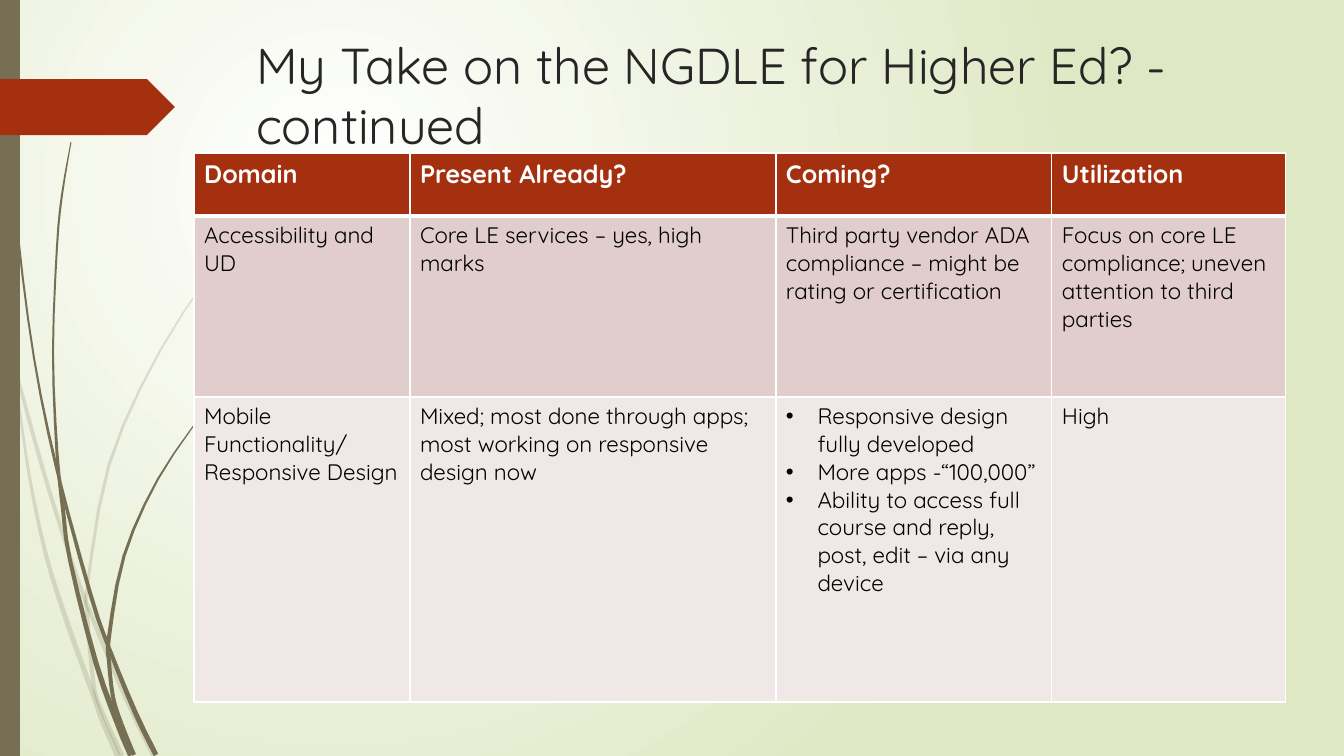
import math

import pptx
import pptx.dml.color
import pptx.enum.shapes
import pptx.enum.text
import pptx.oxml
import pptx.oxml.ns
import pptx.util

PX = 914400 / 100.8  # EMU in one px
FONT = "Quicksand"
COLORS = {
    "stem": "766F54", "accent": "A53010", "title": "262626", "black": "000000",
    "white": "FFFFFF", "band": "E1CDCC", "band_light": "F0E8E7", "edge": "DFE8C4",
}

# Each strand has the points where its pieces meet, then its spine
# from tip to root: (x, y, thickness) in px
PALE_STRANDS = [
    ((1, 4), [(0, 293, 3), (11, 350, 3), (36, 445, 4), (60, 525, 4), (86, 602, 4), (126, 698, 5),
              (154, 756, 5)]),
    ((6,), [(11, 353, 1), (17, 390, 2), (29, 474, 3), (46, 555, 4), (68, 625, 5), (93, 694, 5),
            (102, 720, 5), (118, 756, 6)]),
    ((5, 6, 8, 9), [(314, 155, 1), (271, 199, 1), (230, 246, 1), (160, 351, 2), (109, 465, 3),
                    (87, 589, 3), (87, 610, 4), (90, 651, 4), (95, 692, 4), (104, 716, 4),
                    (122, 756, 5)]),
]
DARK_STRANDS = [
    ((4, 6), [(4, 0, 1), (8, 111, 1), (18, 235, 2), (34, 358, 2), (57, 470, 3), (91, 596, 4),
              (109, 648, 4), (135, 712, 5), (156, 755, 5)]),
    ((4, 5, 8), [(71, 142, 1), (62, 195, 2), (57, 247, 2), (53, 352, 2), (57, 453, 3),
                 (63, 509, 4), (70, 560, 4), (96, 663, 5), (118, 724, 6), (132, 755, 8)]),
    ((5, 6, 7, 8), [(263, 347, 1), (233, 377, 1), (206, 409, 1), (158, 479, 2), (124, 556, 3),
                    (109, 637, 4), (109, 661, 4), (113, 697, 4), (121, 724, 5), (134, 755, 4)]),
]

HEADER = ["Domain", "Present Already?", "Coming?", "Utilization"]
ROWS = [
    ["Accessibility and UD", "Core LE services – yes, high marks",
     "Third party vendor ADA compliance – might be rating or certification",
     "Focus on core LE compliance; uneven attention to third parties"],
    ["Mobile Functionality/\nResponsive Design",
     "Mixed; most done through apps; most working on responsive design now",
     ["Responsive design fully developed", "More apps -“100,000”",
      "Ability to access full course and reply, post, edit – via any device"],
     "High"],
]


def emu(px):
    return pptx.util.Emu(round(px * PX))


def rgb(name):
    return pptx.dml.color.RGBColor.from_string(COLORS[name])


def add_xml(parent, xml):
    """Append a drawing element given as 'a:name ...' markup."""
    head, rest = xml.split(" ", 1)
    parent.append(pptx.oxml.parse_xml(f"{head} {pptx.oxml.ns.nsdecls('a')} {rest}"))


def write_text(frame, text, size, color, bold=False, bullets=False):
    """Write one paragraph per line of text."""
    frame.text = text
    for paragraph in frame.paragraphs:
        font = paragraph.runs[0].font
        font.name, font.size, font.bold = FONT, pptx.util.Pt(size), bold
        font.color.rgb = rgb(color)
        if bullets:
            properties = paragraph._p.get_or_add_pPr()
            properties.set("marL", "285750")
            properties.set("indent", "-285750")
            add_xml(properties, '<a:buFont typeface="Arial"/>')
            add_xml(properties, '<a:buChar char="•"/>')


def paint(shape, color, opacity=100):
    shape.shadow.inherit = False
    shape.fill.solid()
    shape.fill.fore_color.rgb = rgb(color)
    shape.line.fill.background()
    if opacity < 100:
        fill_color = shape.fill._xPr.find(".//" + pptx.oxml.ns.qn("a:srgbClr"))
        add_xml(fill_color, f'<a:alpha val="{opacity * 1000}"/>')


def smooth(points, steps):
    """Pass a Catmull-Rom curve through the points, thickness included."""
    padded = [points[0], *points, points[-1]]
    curve = []
    for a, b, c, d in zip(padded, padded[1:], padded[2:], padded[3:]):
        for step in range(steps):
            t = step / steps
            curve.append(tuple(
                q + t / 2 * (r - p + t * (2 * p - 5 * q + 4 * r - s + t * (3 * q - p - 3 * r + s)))
                for p, q, r, s in zip(a, b, c, d)))
    return curve + [points[-1]]


def add_strand(slide, left, top, cuts, points, opacity, steps=3):
    curve = smooth(points, steps)
    sides = [[], []]
    for index, (x, y, thickness) in enumerate(curve):
        before, after = curve[max(index - 1, 0)], curve[min(index + 1, len(curve) - 1)]
        dx, dy = after[0] - before[0], after[1] - before[1]
        half = thickness / 2 / math.hypot(dx, dy)
        for side, sign in zip(sides, (1, -1)):
            side.append((emu(left + x + sign * dy * half), emu(top + y - sign * dx * half)))
    limits = [0, *cuts, len(points) - 1]
    for start, end in zip(limits, limits[1:]):
        piece = slice(start * steps, end * steps + 1)
        outline = sides[0][piece] + sides[1][piece][::-1]
        builder = slide.shapes.build_freeform(*outline[0], scale=1.0)
        builder.add_line_segments(outline[1:], close=True)
        paint(builder.convert_to_shape(), "stem", opacity)


def add_background(slide):
    fill = slide.background.fill
    fill.gradient()
    for stop, color in zip(fill.gradient_stops, ("white", "edge")):
        stop.color.rgb = rgb(color)
    gradient = slide.element.find(".//" + pptx.oxml.ns.qn("a:gradFill"))
    gradient.remove(gradient.find(pptx.oxml.ns.qn("a:lin")))
    add_xml(gradient, '<a:path path="circle">'
                      '<a:fillToRect l="50000" t="50000" r="100000" b="100000"/></a:path>')


def add_side_decoration(slide, left, top, height):
    for strands, opacity in ((PALE_STRANDS, 20), (DARK_STRANDS, 100)):
        for cuts, points in strands:
            add_strand(slide, left, top, cuts, points, opacity)
    kinds = pptx.enum.shapes.MSO_SHAPE
    # Side bar, then the arrow tag
    for kind, offset, width, tall, color in ((kinds.RECTANGLE, 0, 20, height, "stem"),
                                             (kinds.PENTAGON, 79, 175, 56, "accent")):
        shape = slide.shapes.add_shape(kind, emu(left), emu(top + offset), emu(width), emu(tall))
        paint(shape, color)


def format_cell(cell, fill, bottom_line):
    cell.fill.solid()
    cell.fill.fore_color.rgb = rgb(fill)
    properties = cell._tc.get_or_add_tcPr()
    widths = {"lnL": 1, "lnR": 1, "lnT": 1, "lnB": bottom_line}
    for index, (edge, points) in enumerate(widths.items()):
        add_xml(properties, f'<a:{edge} w="{points * 12700}"><a:solidFill>'
                            f'<a:srgbClr val="{COLORS["white"]}"/></a:solidFill></a:{edge}>')
        properties.insert(index, properties[-1])


def add_domain_table(slide, left, top, widths, heights):
    frame = slide.shapes.add_table(len(heights), len(widths), emu(left), emu(top),
                                   emu(sum(widths)), emu(sum(heights)))
    table = frame.table
    for column, width in zip(table.columns, widths):
        column.width = emu(width)
    for row, height in zip(table.rows, heights):
        row.height = emu(height)
    fills = ("accent", "band", "band_light")
    for row_index, texts in enumerate([HEADER, *ROWS]):
        is_header = row_index == 0
        for column_index, text in enumerate(texts):
            cell = table.cell(row_index, column_index)
            bullets = isinstance(text, list)
            write_text(cell.text_frame, "\n".join(text) if bullets else text,
                       size=18 if is_header else 16, color="white" if is_header else "black",
                       bold=is_header, bullets=bullets)
            format_cell(cell, fills[row_index], bottom_line=3 if is_header else 1)


def place_title(slide, left, top, width, height):
    title = slide.shapes.title
    title.left, title.top, title.width, title.height = map(emu, (left, top, width, height))
    frame = title.text_frame
    write_text(frame, "My Take on the NGDLE for Higher Ed? - continued", size=36, color="title")
    frame.word_wrap = True
    frame.auto_size = pptx.enum.text.MSO_AUTO_SIZE.NONE
    frame.vertical_anchor = pptx.enum.text.MSO_ANCHOR.TOP
    frame.paragraphs[0].alignment = pptx.enum.text.PP_ALIGN.LEFT
    slide.shapes._spTree.append(title._element)  # bring to front


def main():
    presentation = pptx.Presentation()
    presentation.slide_width, presentation.slide_height = emu(1344), emu(756)
    slide = presentation.slides.add_slide(presentation.slide_layouts[5])
    add_background(slide)
    add_side_decoration(slide, 0, 0, 756)
    add_domain_table(slide, 194, 153, widths=(216, 366, 276, 234), heights=(63, 181, 305))
    place_title(slide, 246, 29, 983, 141)
    presentation.save("out.pptx")


if __name__ == "__main__":
    main()
